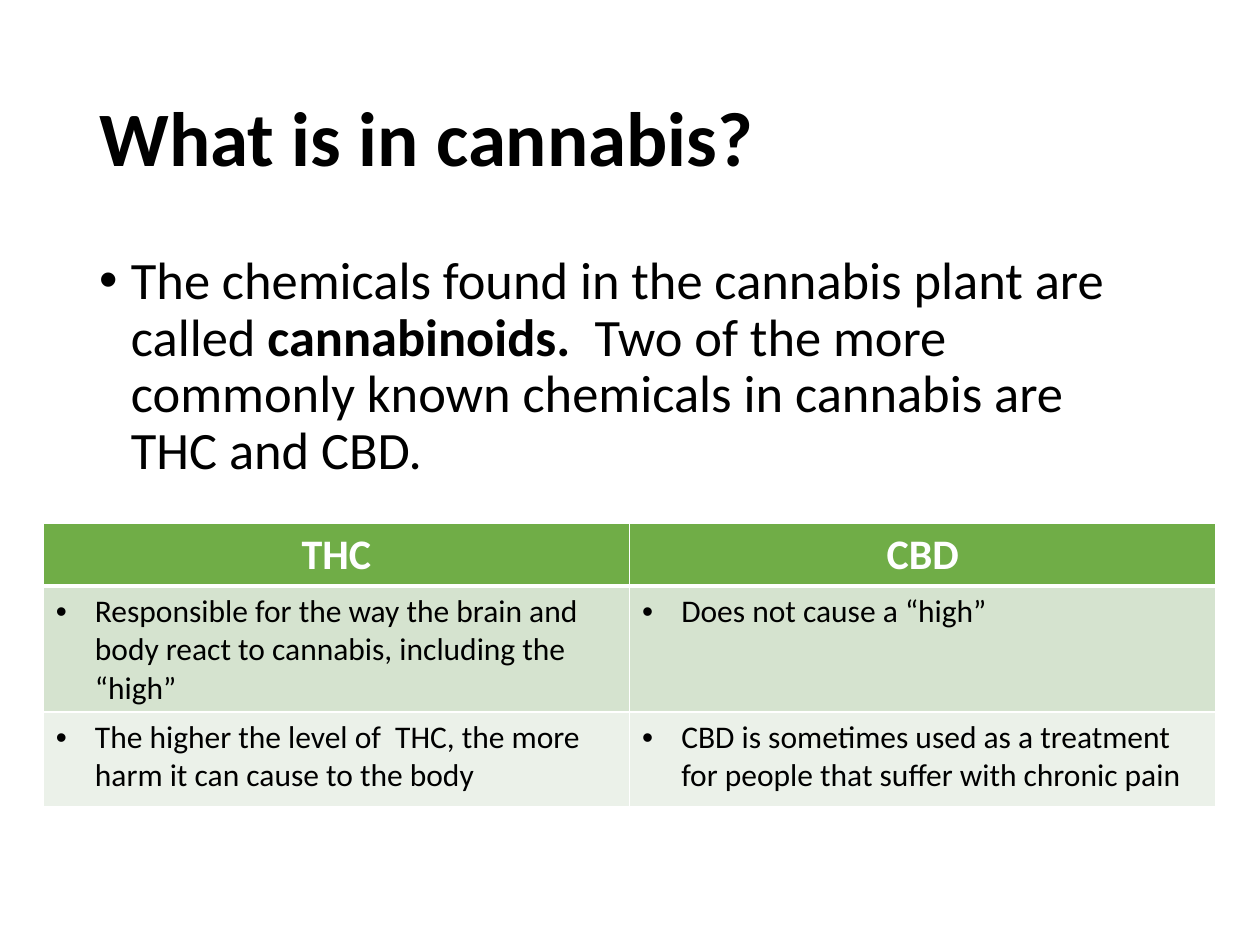
from dataclasses import dataclass

from lxml import etree
from pptx import Presentation
from pptx import util as u
from pptx.dml.color import RGBColor
from pptx.enum import text
from pptx.oxml.ns import qn

FONT = "Calibri"
BLACK, WHITE, GREEN = "000000", "FFFFFF", "70AD47"


@dataclass
class Row:
    cells: tuple[str, str]
    high: float
    fill: str
    head: bool = False


ROWS = [
    Row(("THC", "CBD"), 1.14, GREEN, head=True),
    Row(("Responsible for the way the brain and body react to cannabis, "
         "including the “high”",
         "Does not cause a “high”"), 2.26, "D5E3CF"),
    Row(("The higher the level of  THC, the more harm it can cause to the body",
         "CBD is sometimes used as a treatment for people that suffer "
         "with chronic pain"), 1.91, "EBF1E9"),
]


def color(code: str) -> RGBColor:
    return RGBColor.from_string(code)


def style(run, size: float, code: str = BLACK, bold: bool = False) -> None:
    font = run.font
    font.name, font.size, font.bold = FONT, u.Pt(size), bold
    font.color.rgb = color(code)


def bullet(para, indent: float) -> None:
    props = para._p.get_or_add_pPr()
    props.set("marL", str(u.Cm(indent)))
    props.set("indent", str(-u.Cm(indent)))
    etree.SubElement(props, qn("a:buFont")).set("typeface", "Arial")
    etree.SubElement(props, qn("a:buChar")).set("char", "•")


def border(cell, head: bool) -> None:
    props = cell._tc.get_or_add_tcPr()
    widths = {"lnL": 1, "lnR": 1, "lnT": 1, "lnB": 3 if head else 1}
    for place, (tag, width) in enumerate(widths.items()):
        line = etree.Element(qn(f"a:{tag}"), w=str(u.Pt(width)))
        fill = etree.SubElement(line, qn("a:solidFill"))
        etree.SubElement(fill, qn("a:srgbClr")).set("val", WHITE)
        props.insert(place, line)


def fill_cell(cell, words: str, row: Row) -> None:
    cell.fill.solid()
    cell.fill.fore_color.rgb = color(row.fill)
    border(cell, row.head)
    para = cell.text_frame.paragraphs[0]
    para.text = words
    if row.head:
        para.alignment = text.PP_ALIGN.CENTER
        style(para.runs[0], 24, WHITE, bold=True)
    else:
        bullet(para, 0.79)
        style(para.runs[0], 18)


def add_title(slide) -> None:
    title = slide.shapes.title
    title.left, title.top = u.Cm(1.75), u.Cm(1.02)
    title.width, title.height = u.Cm(21.9), u.Cm(3.68)
    frame = title.text_frame
    frame.text = "What is in cannabis?"
    frame.vertical_anchor = text.MSO_ANCHOR.MIDDLE
    para = frame.paragraphs[0]
    para.alignment, para.line_spacing = text.PP_ALIGN.LEFT, 0.9
    style(para.runs[0], 44, bold=True)


def add_body(slide) -> None:
    box = slide.shapes.add_textbox(u.Cm(1.75), u.Cm(5), u.Cm(21.9), u.Cm(12.09))
    frame = box.text_frame
    frame.word_wrap = True
    para = frame.paragraphs[0]
    para.line_spacing = 0.9
    bullet(para, 0.64)
    parts = [
        ("The chemicals found in the cannabis plant are called ", False),
        ("cannabinoids.  ", True),
        ("Two of the more commonly known chemicals in cannabis are "
         "THC and CBD.", False),
    ]
    for words, bold in parts:
        run = para.add_run()
        run.text = words
        style(run, 30, bold=bold)


def add_grid(slide, rows: list[Row]) -> None:
    high = sum(row.high for row in rows)
    grid = slide.shapes.add_table(len(rows), 2, u.Cm(0.87), u.Cm(10.54),
                                  u.Cm(23.64), u.Cm(high)).table
    for line, row in zip(grid.rows, rows):
        line.height = u.Cm(row.high)
        for cell, words in zip(line.cells, row.cells):
            fill_cell(cell, words, row)


def main() -> None:
    deck = Presentation()
    deck.slide_width, deck.slide_height = u.Cm(25.4), u.Cm(19.05)
    slide = deck.slides.add_slide(deck.slide_layouts[5])  # title only
    add_title(slide)
    add_body(slide)
    add_grid(slide, ROWS)
    deck.save("out.pptx")


if __name__ == "__main__":
    main()
